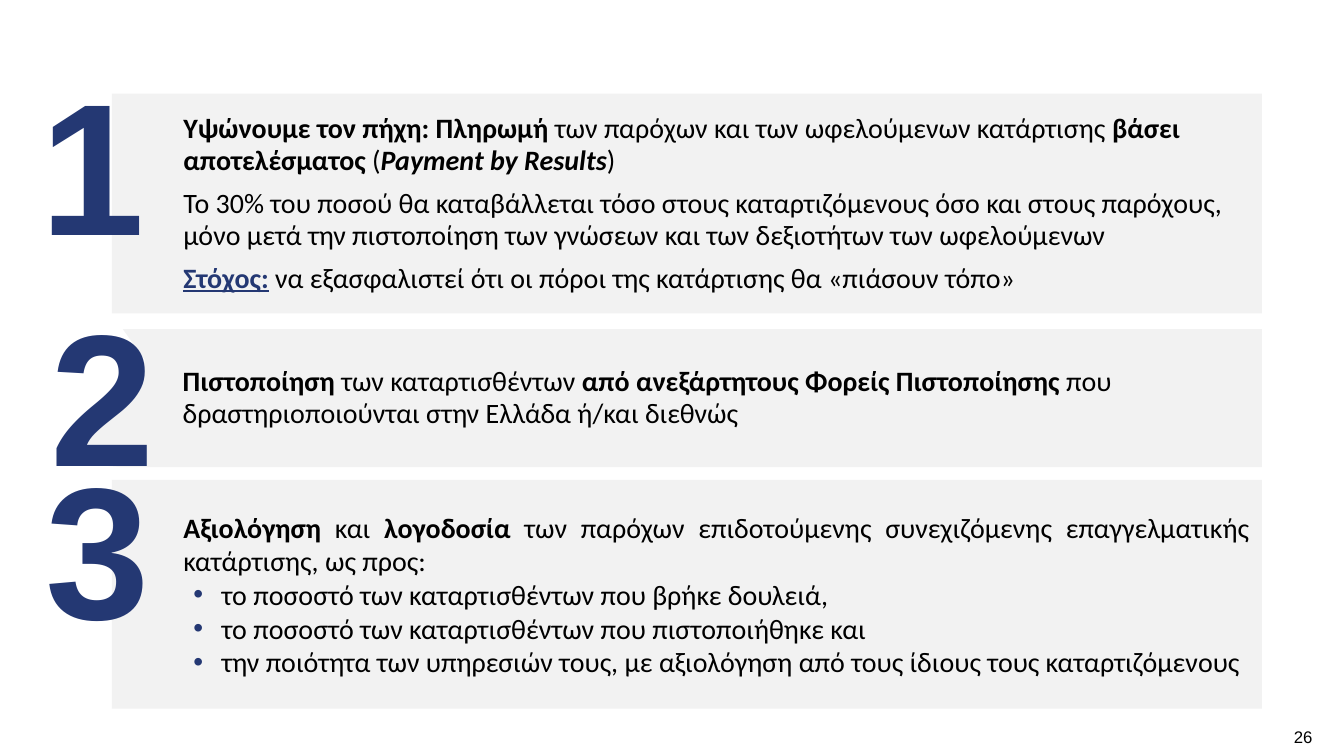
import pptx
import pptx.util
import pptx.dml.color
import pptx.enum.shapes
import pptx.enum.text
import lxml.etree
import pptx.oxml.ns

COLORS = {"panel": "F2F2F2", "navy": "243873", "text": "000000"}
ALIGN = pptx.enum.text.PP_ALIGN
MIDDLE = pptx.enum.text.MSO_ANCHOR.MIDDLE

deck = pptx.Presentation()
deck.slide_width = pptx.util.Inches(13.34)
deck.slide_height = pptx.util.Inches(7.5)
column, row = deck.slide_width / 100, deck.slide_height / 100
slide = deck.slides.add_slide(deck.slide_layouts[6])


def write(paragraph, parts, size, font, align):
    paragraph.alignment = align
    for words, style, color in parts:
        run = paragraph.add_run()
        run.text = words
        run.font.size = pptx.util.Pt(size)
        run.font.name = font
        run.font.bold = "b" in style
        run.font.italic = "i" in style
        run.font.underline = "u" in style
        run.font.color.rgb = pptx.dml.color.RGBColor.from_string(COLORS[color])


def add_label(words, left, top, width, height, margin, size, style, color):
    label = slide.shapes.add_textbox(
        int(left * column), int(top * row), int(width * column), int(height * row))
    frame = label.text_frame
    frame.word_wrap = False
    frame.auto_size = pptx.enum.text.MSO_AUTO_SIZE.SHAPE_TO_FIT_TEXT
    frame.margin_left = frame.margin_right = pptx.util.Inches(margin)
    frame.margin_top = frame.margin_bottom = pptx.util.Inches(margin)
    write(frame.paragraphs[0], [(words, style, color)], size, "Arial", ALIGN.CENTER)
    return frame


add_label("26", 95.73, 95.33, 2.47, 4.13, 0.06, 12, "", "text")

payment = [
    [("Υψώνουμε τον πήχη: Πληρωμή", "b", "text"),
     (" των παρόχων και των ωφελούμενων κατάρτισης ", "", "text"),
     ("βάσει αποτελέσματος ", "b", "text"), ("(", "", "text"),
     ("Payment by Results", "bi", "text"), (")", "", "text")],
    [("Το 30% του ποσού θα καταβάλλεται τόσο στους καταρτιζόμενους όσο και στους παρόχους, "
      "μόνο μετά την πιστοποίηση των γνώσεων και των δεξιοτήτων των ωφελούμενων", "", "text")],
    [("Στόχος:", "bu", "navy"),
     (" να εξασφαλιστεί ότι οι πόροι της κατάρτισης θα «πιάσουν τόπο»", "", "text")],
]
certification = [
    [("Πιστοποίηση", "b", "text"), (" των καταρτισθέντων ", "", "text"),
     ("από ανεξάρτητους Φορείς Πιστοποίησης ", "b", "text"),
     ("που δραστηριοποιούνται στην Ελλάδα ή/και διεθνώς", "", "text")],
]
evaluation = [
    [("Αξιολόγηση", "b", "text"), (" και ", "", "text"), ("λογοδοσία", "b", "text"),
     (" των παρόχων επιδοτούμενης συνεχιζόμενης επαγγελματικής κατάρτισης, ως προς:", "", "text")],
    [("το ποσοστό των καταρτισθέντων που βρήκε δουλειά,", "", "text")],
    [("το ποσοστό των καταρτισθέντων που πιστοποιήθηκε και", "", "text")],
    [("την ποιότητα των υπηρεσιών τους, με αξιολόγηση από τους ίδιους τους καταρτιζόμενους",
      "", "text")],
]

panel_left, panel_right = 8.32, 93.9
payment_panel, evaluation_panel = [
    slide.shapes.add_shape(
        pptx.enum.shapes.MSO_SHAPE.RECTANGLE, int(panel_left * column), int(top * row),
        int((panel_right - panel_left) * column), int(height * row))
    for top, height in ((12.4, 29.07), (63.47, 30.27))]

curve = [(9.15, 61.8), (1.27, 61.33), (10.79, 50.27), (10.79, 47.6)]
steps = 24
edge = []
for step in range(steps + 1):
    t = step / steps
    weights = ((1 - t) ** 3, 3 * t * (1 - t) ** 2, 3 * t ** 2 * (1 - t), t ** 3)
    edge.append(tuple(sum(w * point[axis] for w, point in zip(weights, curve)) for axis in (0, 1)))
outline = [(panel_right, 43.55), (panel_right, 61.8)] + edge
builder = slide.shapes.build_freeform(int(9.15 * column), int(43.55 * row))
builder.add_line_segments([(int(x * column), int(y * row)) for x, y in outline], close=True)
certification_panel = builder.convert_to_shape()

for panel, paragraphs, align, indent in (
        (payment_panel, payment, ALIGN.LEFT, 0),
        (certification_panel, certification, ALIGN.LEFT, 0.3),
        (evaluation_panel, evaluation, ALIGN.JUSTIFY, 0)):
    panel.shadow.inherit = False
    panel.fill.solid()
    panel.fill.fore_color.rgb = pptx.dml.color.RGBColor.from_string(COLORS["panel"])
    panel.line.fill.background()
    frame = panel.text_frame
    frame.word_wrap = True
    frame.vertical_anchor = MIDDLE
    frame.margin_left, frame.margin_right = pptx.util.Inches(0.71), pptx.util.Inches(0.12)
    frame.margin_top = frame.margin_bottom = pptx.util.Inches(0.08)
    for index, parts in enumerate(paragraphs):
        paragraph = frame.add_paragraph() if index else frame.paragraphs[0]
        properties = paragraph._p.get_or_add_pPr()
        properties.set("marL", str(pptx.util.Inches(indent)))
        if panel is not evaluation_panel:
            paragraph.line_spacing = 0.95
            paragraph.space_after = pptx.util.Pt(8)
        elif index:
            properties.set("marL", str(pptx.util.Inches(0.38)))
            properties.set("indent", str(pptx.util.Inches(-0.28)))
            bullet_color = lxml.etree.SubElement(properties, pptx.oxml.ns.qn("a:buClr"))
            lxml.etree.SubElement(bullet_color, pptx.oxml.ns.qn("a:srgbClr"), val=COLORS["navy"])
            lxml.etree.SubElement(properties, pptx.oxml.ns.qn("a:buFont"), typeface="Arial")
            lxml.etree.SubElement(properties, pptx.oxml.ns.qn("a:buChar"), char="•")
        write(paragraph, parts, 20, "Calibri", align)

for numeral, left, top in (("1", 2.85, 10.4), ("2", 3.6, 40.93), ("3", 3.22, 61.2)):
    frame = add_label(numeral, left, top, 8.1, 26.27, 0, 134, "b", "navy")
    frame.vertical_anchor = MIDDLE
    frame.paragraphs[0].line_spacing = 0.85
    frame.paragraphs[0].space_after = pptx.util.Pt(6)

deck.save("out.pptx")
